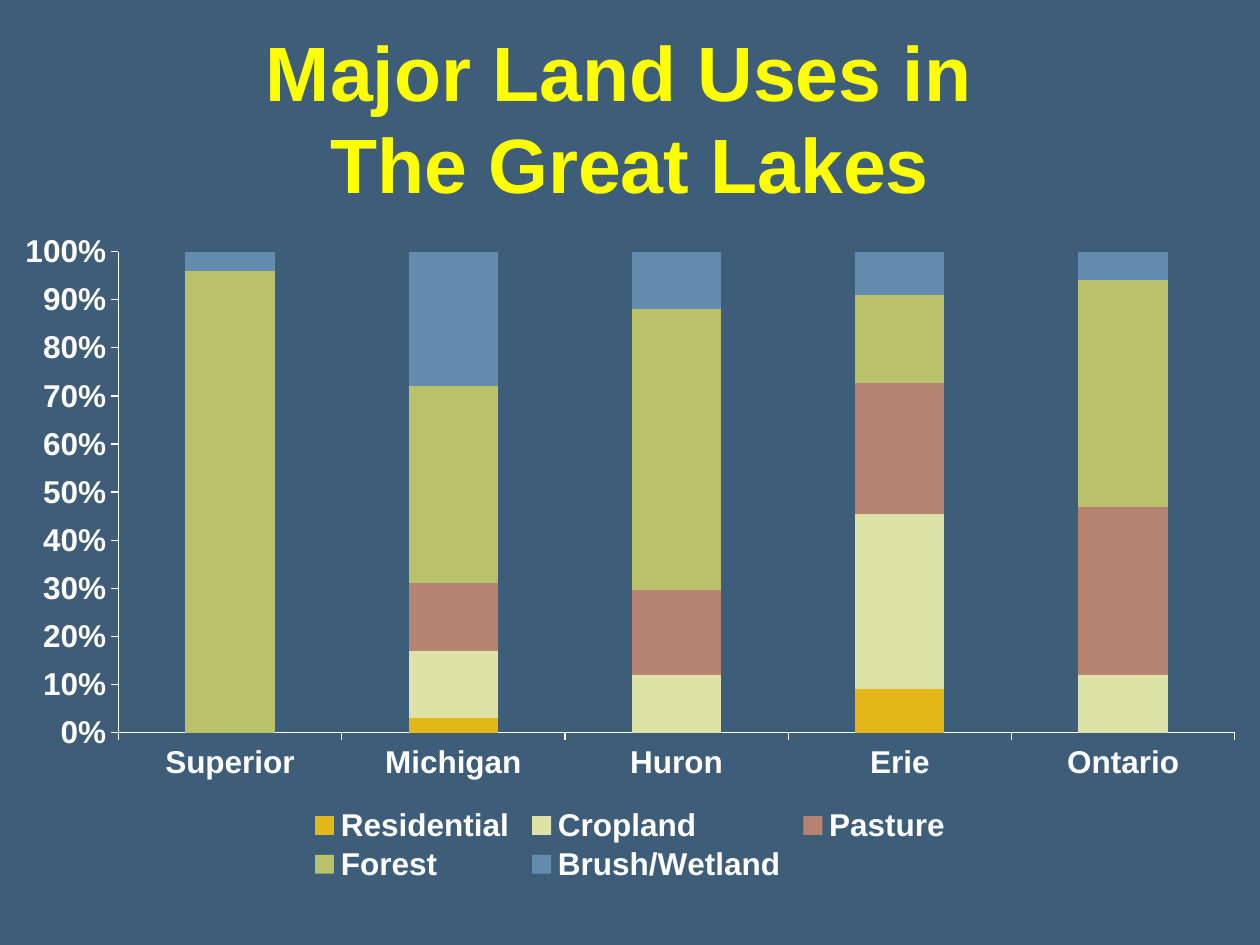
import dataclasses

import pptx
import pptx.chart.data
import pptx.dml.color
import pptx.enum.chart
import pptx.enum.text
import pptx.oxml
import pptx.oxml.ns
import pptx.util

SCALE = 914400 / 126  # EMU per px


@dataclasses.dataclass
class Theme:
    back: str = "3E5D78"
    head: str = "FFFF00"
    text: str = "FFFFFF"
    font: str = "Arial"
    big: int = 44
    small: int = 18


LAKES = ["Superior", "Michigan", "Huron", "Erie", "Ontario"]
USES = [
    ("Residential", "E3B717", (0, 3, 0, 9, 0)),
    ("Cropland", "DDE3A7", (0, 14, 12, 36, 12)),
    ("Pasture", "B88472", (0, 14, 18, 27, 35)),
    ("Forest", "B9C26B", (96, 41, 59, 18, 47)),
    ("Brush/Wetland", "638CAE", (4, 28, 12, 9, 6)),
]


def px(num):
    return pptx.util.Emu(round(num * SCALE))


def rgb(code):
    return pptx.dml.color.RGBColor.from_string(code)


def style(font, size, color, name, bold=True):
    font.size = pptx.util.Pt(size)
    font.bold = bold
    font.name = name
    font.color.rgb = rgb(color)


def write(frame, text, align=pptx.enum.text.PP_ALIGN.CENTER, **form):
    """Put lines of text in one paragraph, with line breaks between."""
    para = frame.paragraphs[0]
    para.alignment = align
    for i, line in enumerate(text.split("\n")):
        if i:
            para.add_line_break()
        run = para.add_run()
        run.text = line
        style(run.font, **form)
    return para.runs


def shade(run):
    """Give a run a soft dark shadow."""
    ns = pptx.oxml.ns.nsdecls("a")
    node = pptx.oxml.parse_xml(
        f'<a:effectLst {ns}><a:outerShdw blurRad="38100" dist="38100" '
        'dir="2700000" algn="tl"><a:srgbClr val="000000">'
        '<a:alpha val="43000"/></a:srgbClr></a:outerShdw></a:effectLst>')
    fill = run.font._element.find(pptx.oxml.ns.qn("a:solidFill"))
    fill.addnext(node)


def lay(prior, inner=False, **box):
    """Fix a chart part's place, as shares of the chart area."""
    keys = [("layoutTarget", "inner")] if inner else []
    keys += [("xMode", "edge"), ("yMode", "edge"), *box.items()]
    body = "".join(f'<c:{k} val="{v}"/>' for k, v in keys)
    ns = pptx.oxml.ns.nsdecls("c")
    prior.addnext(pptx.oxml.parse_xml(
        f"<c:layout {ns}><c:manualLayout>{body}</c:manualLayout></c:layout>"))


class Deck:
    def __init__(self, theme):
        self.theme = theme
        self.file = pptx.Presentation()
        self.file.slide_width = px(1260)
        self.file.slide_height = px(945)
        self.slide = self.file.slides.add_slide(self.file.slide_layouts[5])
        fill = self.slide.background.fill
        fill.solid()
        fill.fore_color.rgb = rgb(theme.back)

    def title(self, text, x, y, w, h):
        shape = self.slide.shapes.title
        shape.left, shape.top, shape.width, shape.height = map(px, (x, y, w, h))
        frame = shape.text_frame
        frame.word_wrap = True
        frame.auto_size = pptx.enum.text.MSO_AUTO_SIZE.NONE
        frame.vertical_anchor = pptx.enum.text.MSO_ANCHOR.MIDDLE
        look = self.theme
        for run in write(frame, text, size=look.big, color=look.head,
                         name=look.font):
            shade(run)

    def label(self, font):
        style(font, self.theme.small, self.theme.text, self.theme.font)

    def axis(self, axis):
        axis.has_major_gridlines = False
        axis.major_tick_mark = pptx.enum.chart.XL_TICK_MARK.OUTSIDE
        axis.minor_tick_mark = pptx.enum.chart.XL_TICK_MARK.NONE
        axis.format.line.color.rgb = rgb(self.theme.text)
        axis.format.line.width = pptx.util.Pt(0.75)
        self.label(axis.tick_labels.font)

    def chart(self, cats, rows, x, y, w, h):
        data = pptx.chart.data.CategoryChartData()
        data.categories = cats
        for name, _, vals in rows:
            data.add_series(name, vals)
        kind = pptx.enum.chart.XL_CHART_TYPE.COLUMN_STACKED_100
        chart = self.slide.shapes.add_chart(
            kind, *map(px, (x, y, w, h)), data).chart
        chart.has_title = False
        self.label(chart.font)

        # Bars
        plot = chart.plots[0]
        plot.gap_width, plot.overlap = 150, 100
        plot.vary_by_categories = False
        for series, (_, color, _) in zip(plot.series, rows):
            series.format.fill.solid()
            series.format.fill.fore_color.rgb = rgb(color)

        # Axes
        self.axis(chart.category_axis)
        axis = chart.value_axis
        self.axis(axis)
        axis.minimum_scale, axis.maximum_scale, axis.major_unit = 0, 1, 0.1
        axis.tick_labels.number_format = "0%"
        axis.tick_labels.number_format_is_linked = False

        # Legend
        chart.has_legend = True
        legend = chart.legend
        legend.position = pptx.enum.chart.XL_LEGEND_POSITION.BOTTOM
        legend.include_in_layout = False
        self.label(legend.font)

        # Places of plot and legend
        qn = pptx.oxml.ns.qn
        area = chart._chartSpace.chart.plotArea
        for old in area.findall(qn("c:layout")):
            area.remove(old)
        mark = pptx.oxml.parse_xml(
            f'<c:layout {pptx.oxml.ns.nsdecls("c")}/>')
        area.insert(0, mark)
        lay(mark, inner=True, x=0.094, y=0.047, w=0.886, h=0.716)
        area.remove(mark)
        node = legend._element
        for old in node.findall(qn("c:layout")):
            node.remove(old)
        lay(node.find(qn("c:legendPos")), x=0.24, y=0.87, w=0.52, h=0.12)


def main():
    deck = Deck(Theme())
    deck.chart(LAKES, USES, 0, 220, 1260, 672)
    deck.title("Major Land Uses in \nThe Great Lakes", 63, 38, 1134, 158)
    deck.file.save("out.pptx")


if __name__ == "__main__":
    main()
